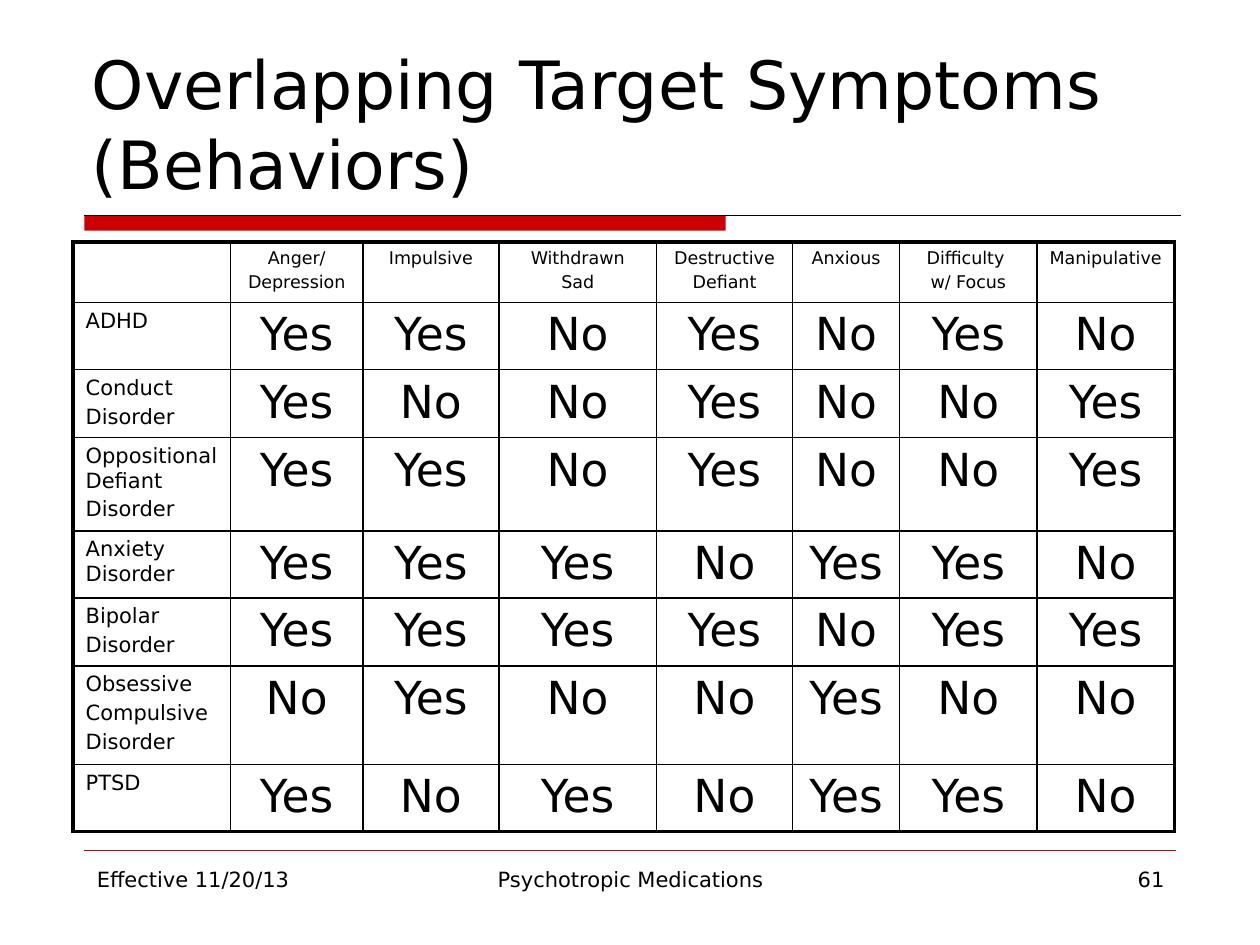
from lxml.etree import SubElement
from pptx import Presentation
from pptx.dml.color import RGBColor
from pptx.enum.shapes import MSO_CONNECTOR, MSO_SHAPE
from pptx.enum.text import MSO_ANCHOR, PP_ALIGN
from pptx.oxml.ns import qn
from pptx.util import Inches, Pt

BLACK = RGBColor(0x00, 0x00, 0x00)
RED = RGBColor(0xCC, 0x00, 0x00)

COLUMN_WIDTHS = [1.25, 1.05, 1.08, 1.25, 1.08, 0.85, 1.09, 1.09]
ROW_HEIGHTS = [0.48, 0.53, 0.54, 0.74, 0.53, 0.54, 0.78, 0.53]
BEHAVIORS = ["", "Anger/\nDepression", "Impulsive", "Withdrawn\nSad", "Destructive\nDefiant",
             "Anxious", "Difficulty \nw/ Focus", "Manipulative"]
DISORDERS = [
    ("ADHD", "Yes Yes No Yes No Yes No"),
    ("Conduct\nDisorder", "Yes No No Yes No No Yes"),
    ("Oppositional Defiant\nDisorder", "Yes Yes No Yes No No Yes"),
    ("Anxiety Disorder", "Yes Yes Yes No Yes Yes No"),
    ("Bipolar\nDisorder", "Yes Yes Yes Yes No Yes Yes"),
    ("Obsessive\nCompulsive\nDisorder", "No Yes No No Yes No No"),
    ("PTSD", "Yes No Yes No Yes Yes No"),
]


def write(frame, text, size=12, align=PP_ALIGN.LEFT, color=BLACK, font="DejaVu Sans", gap=0):
    for index, line in enumerate(text.split("\n")):
        para = frame.paragraphs[0] if index == 0 else frame.add_paragraph()
        para.alignment = align
        para.space_before = Pt(size * gap)
        span = para.add_run()
        span.text = line
        span.font.name = font
        span.font.size = Pt(size)
        span.font.color.rgb = color


class SlideBuilder:
    outer_border = 2.25
    inner_border = 1

    def __init__(self, page):
        self.page = page

    def text(self, left, top, width, height, text, anchor=MSO_ANCHOR.TOP, **style):
        box = self.page.shapes.add_textbox(Inches(left), Inches(top), Inches(width), Inches(height))
        box.text_frame.word_wrap = True
        box.text_frame.vertical_anchor = anchor
        write(box.text_frame, text, **style)

    def bar(self, left, top, width, height, color):
        bar = self.page.shapes.add_shape(
            MSO_SHAPE.RECTANGLE, Inches(left), Inches(top), Inches(width), Inches(height))
        bar.shadow.inherit = False
        bar.fill.solid()
        bar.fill.fore_color.rgb = color
        bar.line.fill.background()

    def rule(self, left, right, top, color, weight):
        rule = self.page.shapes.add_connector(
            MSO_CONNECTOR.STRAIGHT, Inches(left), Inches(top), Inches(right), Inches(top))
        rule.line.color.rgb = color
        rule.line.width = Pt(weight)
        SubElement(rule._element.spPr, qn("a:effectLst"))

    def border(self, cell, side, weight):
        properties = cell._tc.get_or_add_tcPr()
        line = SubElement(properties, qn(f"a:ln{side}"), w=str(Pt(weight)))
        fill = SubElement(line, qn("a:solidFill"))
        SubElement(fill, qn("a:srgbClr"), val=str(BLACK))

    def table(self, left, top, widths, heights, rows):
        table = self.page.shapes.add_table(
            len(heights), len(widths), Inches(left), Inches(top),
            Inches(sum(widths)), Inches(sum(heights))).table
        table.first_row = False
        table.horz_banding = False
        for column, width in zip(table.columns, widths):
            column.width = Inches(width)
        for row, height in zip(table.rows, heights):
            row.height = Inches(height)
        for r, texts in enumerate(rows):
            for c, text in enumerate(texts):
                cell = table.cell(r, c)
                edges = {"L": c == 0, "R": c == len(widths) - 1,
                         "T": r == 0, "B": r == len(heights) - 1}
                for side, is_outer in edges.items():
                    self.border(cell, side, self.outer_border if is_outer else self.inner_border)
                cell.fill.background()
                size = 10 if r == 0 else 12 if c == 0 else 26
                align = PP_ALIGN.LEFT if c == 0 else PP_ALIGN.CENTER
                if text:
                    write(cell.text_frame, text, size=size, align=align, gap=0.2)


def main():
    deck = Presentation()
    deck.slide_width = Inches(10)
    deck.slide_height = Inches(7.5)
    builder = SlideBuilder(deck.slides.add_slide(deck.slide_layouts[6]))

    builder.bar(0.67, 1.71, 5.09, 0.12, RED)
    builder.rule(0.67, 9.37, 1.71, BLACK, 0.75)
    builder.rule(0.67, 9.33, 6.75, RED, 0.25)
    builder.text(0.63, 0.33, 8.75, 1.33, "Overlapping Target Symptoms (Behaviors)",
                 anchor=MSO_ANCHOR.BOTTOM, size=38)
    rows = [BEHAVIORS] + [[name, *answers.split()] for name, answers in DISORDERS]
    builder.table(0.58, 1.92, COLUMN_WIDTHS, ROW_HEIGHTS, rows)
    builder.text(0.67, 6.83, 2.17, 0.52, "Effective 11/20/13")
    builder.text(3.42, 6.83, 3.17, 0.52, "Psychotropic Medications", align=PP_ALIGN.CENTER)
    builder.text(7.17, 6.83, 2.17, 0.52, "61", align=PP_ALIGN.RIGHT)
    deck.save("out.pptx")


if __name__ == "__main__":
    main()
